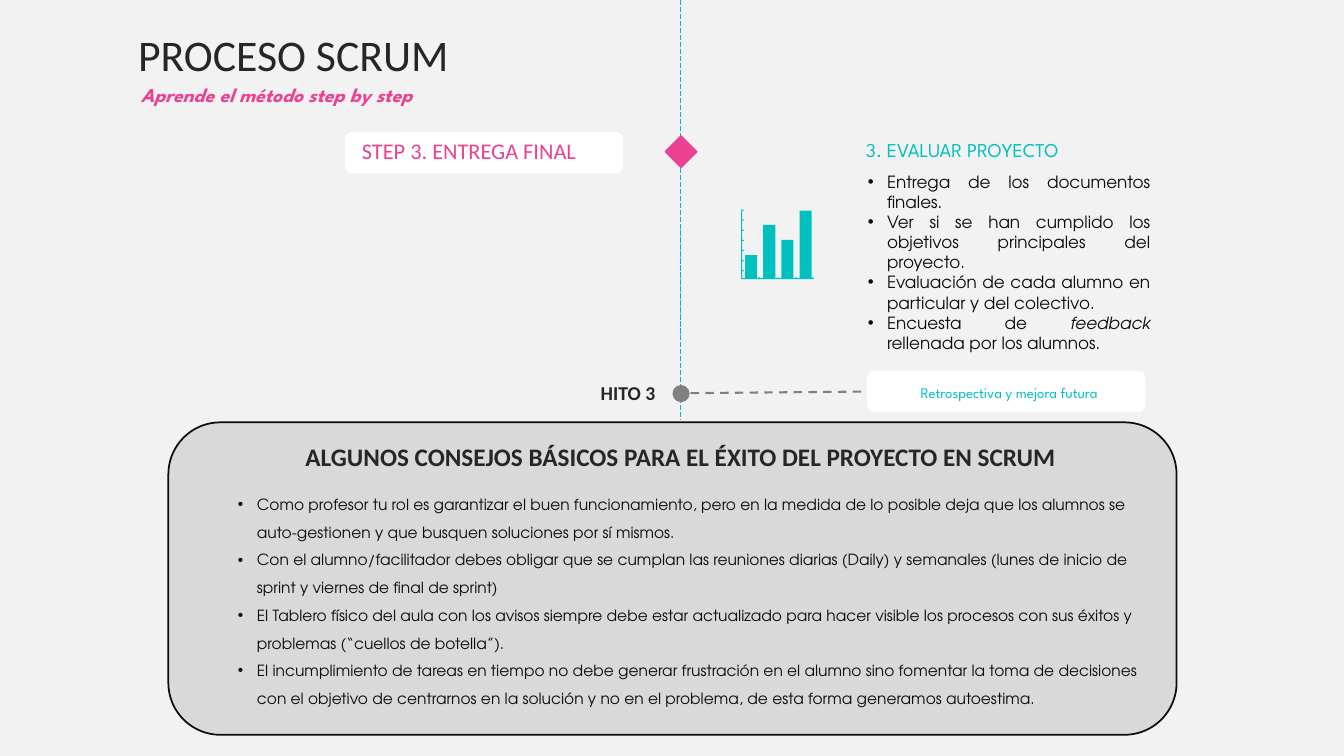
"""Build the Scrum process slide: final delivery step and closing advice."""
from dataclasses import dataclass

import lxml.etree
import pptx
import pptx.dml.color
import pptx.enum.dml
import pptx.enum.shapes
import pptx.enum.text
import pptx.oxml.ns
import pptx.util

Inches = pptx.util.Inches
SHAPE = pptx.enum.shapes.MSO_SHAPE
DASH = pptx.enum.dml.MSO_LINE
ALIGN = pptx.enum.text.PP_ALIGN
qn = pptx.oxml.ns.qn

TITLE = "PROCESO SCRUM"
SUBTITLE = "Aprende el método step by step"
STEP = "STEP 3. ENTREGA FINAL"
MILESTONE = "HITO 3"
OUTCOME = "Retrospectiva y mejora futura"
TASK_HEADING = "3. EVALUAR PROYECTO"
TASKS = [
    ["Entrega de los documentos finales."],
    ["Ver si se han cumplido los objetivos principales del proyecto."],
    ["Evaluación de cada alumno en particular y del colectivo."],
    ["Encuesta de ", "feedback", " rellenada por los alumnos."],
]
ITALIC_WORDS = {"feedback"}
ADVICE_HEADING = "ALGUNOS CONSEJOS BÁSICOS PARA EL ÉXITO DEL PROYECTO EN SCRUM"
ADVICE = [
    ["Como profesor tu rol es garantizar el buen funcionamiento, pero en la medida de lo posible "
     "deja que los alumnos se auto-gestionen y que busquen soluciones por sí mismos."],
    ["Con el alumno/facilitador debes obligar que se cumplan las reuniones diarias (Daily) y "
     "semanales (lunes de inicio de sprint y viernes de final de sprint)"],
    ["El Tablero físico del aula con los avisos siempre debe estar actualizado para hacer visible "
     "los procesos con sus éxitos y problemas (“cuellos de botella”)."],
    ["El incumplimiento de tareas en tiempo no debe generar frustración en el alumno sino fomentar "
     "la toma de decisiones con el objetivo de centrarnos en la solución y no en el problema, de "
     "esta forma generamos autoestima."],
]
ICON_BAR_TOPS = [2.53, 2.23, 2.38, 2.09]


@dataclass(frozen=True)
class Theme:
    """Colours, fonts and type sizes."""
    background: str = "F2F2F2"
    white: str = "FFFFFF"
    panel: str = "D9D9D9"
    grey: str = "808080"
    dark: str = "262626"
    ink: str = "0D0D0D"
    pink: str = "EA4192"
    teal: str = "00C0C0"
    blue: str = "00B0F0"
    plain: str = "Calibri"
    accent: str = "League Spartan"
    body: str = "TeX Gyre Adventor"
    title_size: float = 31.2
    panel_size: float = 18
    step_size: float = 16
    label_size: float = 14
    task_size: float = 12
    advice_size: float = 11
    note_size: float = 10.5


T = Theme()


def rgb(color):
    """Turn a hex string into a colour."""
    return pptx.dml.color.RGBColor.from_string(color)


def style_run(r, font, size, color, bold=False, italic=False):
    """Format one run."""
    f = r.font
    f.name, f.size, f.color.rgb = font, pptx.util.Pt(size), rgb(color)
    f.bold, f.italic = bold, italic


def add_text(s, box, paragraphs, style, align=ALIGN.LEFT, bullets=False, spacing=None,
             bold=False, italic=False):
    """Add a wrapped text box from lists of runs."""
    tf = s.shapes.add_textbox(*map(Inches, box)).text_frame
    tf.word_wrap = True
    tf.auto_size = pptx.enum.text.MSO_AUTO_SIZE.SHAPE_TO_FIT_TEXT
    for i, words in enumerate(paragraphs):
        p = tf.add_paragraph() if i else tf.paragraphs[0]
        p.alignment = align
        if bullets:
            props = p._p.get_or_add_pPr()
            props.set("marL", str(Inches(0.19)))
            props.set("indent", str(Inches(-0.19)))
            lxml.etree.SubElement(props, qn("a:buFont")).set("typeface", "Arial")
            lxml.etree.SubElement(props, qn("a:buChar")).set("char", "•")
        if spacing:
            p.line_spacing = spacing
        for word in words:
            r = p.add_run()
            r.text = word
            style_run(r, *style, bold, italic or word in ITALIC_WORDS)


def paint(sp, fill, line=None):
    """Set a shape's fill and outline."""
    sp.shadow.inherit = False
    sp.fill.solid()
    sp.fill.fore_color.rgb = rgb(fill)
    if line:
        sp.line.color.rgb = rgb(line)
        sp.line.width = pptx.util.Pt(1.25)
    else:
        sp.line.fill.background()


def add_shape(s, kind, box, fill, line=None):
    """Add a painted preset shape."""
    sp = s.shapes.add_shape(kind, *map(Inches, box))
    paint(sp, fill, line)
    return sp


def add_line(s, ends, color, width, dash):
    """Add a dashed straight connector."""
    line = s.shapes.add_connector(pptx.enum.shapes.MSO_CONNECTOR.STRAIGHT, *map(Inches, ends))
    line.line.color.rgb = rgb(color)
    line.line.width = pptx.util.Pt(width)
    line.line.dash_style = dash
    lxml.etree.SubElement(line._element.spPr, qn("a:effectLst"))
    return line


def add_chart_icon(s):
    """Draw the bar icon with its ticked axes as one outline."""
    left, axis, base, bottom, right = 7.35, 7.36, 2.76, 2.77, 8.07
    points = [(left, 2.08)]
    for i in range(7):
        y = 2.08 + 0.1 * i
        points += [(axis, y), (7.38, y), (7.38, y + 0.01), (axis, y + 0.01)]
    points.append((axis, base))
    for i, top in enumerate(ICON_BAR_TOPS):
        x = 7.39 + 0.18 * i
        tick = x + 0.14
        points += [(x, base), (x, top), (x + 0.12, top), (x + 0.12, base)]
        if i < len(ICON_BAR_TOPS) - 1:
            points += [(tick, base), (tick, 2.75), (tick + 0.01, 2.75), (tick + 0.01, base)]
    points += [(8.06, base), (8.06, 2.75), (right, 2.75), (right, bottom), (left, bottom)]
    corners = [(Inches(x), Inches(y)) for x, y in points]
    outline = s.shapes.build_freeform(*corners[0])
    outline.add_line_segments(corners[1:], close=True)
    paint(outline.convert_to_shape(), T.teal)


def add_title(s):
    """Place and format the title."""
    sp = s.shapes.title
    sp.left, sp.top, sp.width, sp.height = map(Inches, (1.27, 0.2, 4.59, 0.65))
    tf = sp.text_frame
    tf.text = TITLE
    tf.word_wrap = True
    tf.auto_size = pptx.enum.text.MSO_AUTO_SIZE.NONE
    tf.vertical_anchor = pptx.enum.text.MSO_ANCHOR.BOTTOM
    p = tf.paragraphs[0]
    p.alignment, p.line_spacing = ALIGN.LEFT, 0.9
    style_run(p.runs[0], T.plain, T.title_size, T.dark)


def main():
    """Build and save the slide."""
    prs = pptx.Presentation()
    prs.slide_width, prs.slide_height = Inches(13.33), Inches(7.5)
    s = prs.slides.add_slide(prs.slide_layouts.get_by_name("Title Only"))
    s.background.fill.solid()
    s.background.fill.fore_color.rgb = rgb(T.background)
    add_title(s)
    add_text(s, (1.3, 0.77, 5.79, 0.34), [[SUBTITLE]], (T.accent, T.label_size, T.pink),
             bold=True, italic=True)

    add_line(s, (6.75, 0, 6.75, 4.16), T.blue, 1.25, DASH.SQUARE_DOT)
    add_shape(s, SHAPE.DIAMOND, (6.6, 1.35, 0.31, 0.31), T.pink, T.pink)
    add_shape(s, SHAPE.ROUNDED_RECTANGLE, (3.42, 1.31, 2.76, 0.41), T.white)
    add_text(s, (3.49, 1.31, 2.73, 0.37), [[STEP]], (T.plain, T.step_size, T.pink))

    add_text(s, (8.49, 1.32, 2.96, 0.34), [[TASK_HEADING]], (T.accent, T.label_size, T.teal))
    add_text(s, (8.51, 1.65, 3, 2.12), TASKS, (T.body, T.task_size, T.ink), ALIGN.JUSTIFY,
             bullets=True)
    add_chart_icon(s)

    add_shape(s, SHAPE.OVAL, (6.67, 3.82, 0.17, 0.17), T.grey)
    add_text(s, (5.86, 3.73, 0.91, 0.34), [[MILESTONE]], (T.plain, T.label_size, T.dark), bold=True)
    outcome = add_shape(s, SHAPE.ROUNDED_RECTANGLE, (8.6, 3.68, 2.76, 0.41), T.white)
    link = add_line(s, (6.85, 3.9, 8.6, 3.89), T.grey, 1.5, DASH.DASH)
    link.end_connect(outcome, 1)
    add_text(s, (8.53, 3.76, 2.96, 0.28), [[OUTCOME]], (T.accent, T.note_size, T.teal), ALIGN.CENTER)

    add_shape(s, SHAPE.ROUNDED_RECTANGLE, (1.67, 4.19, 10, 3.1), T.panel, T.ink)
    add_text(s, (2.09, 4.33, 9.32, 0.4), [[ADVICE_HEADING]], (T.plain, T.panel_size, T.dark),
             ALIGN.CENTER, bold=True)
    add_text(s, (2.26, 4.77, 9.15, 2.52), ADVICE, (T.body, T.advice_size, T.ink), bullets=True,
             spacing=1.5)
    prs.save("out.pptx")


if __name__ == "__main__":
    main()
